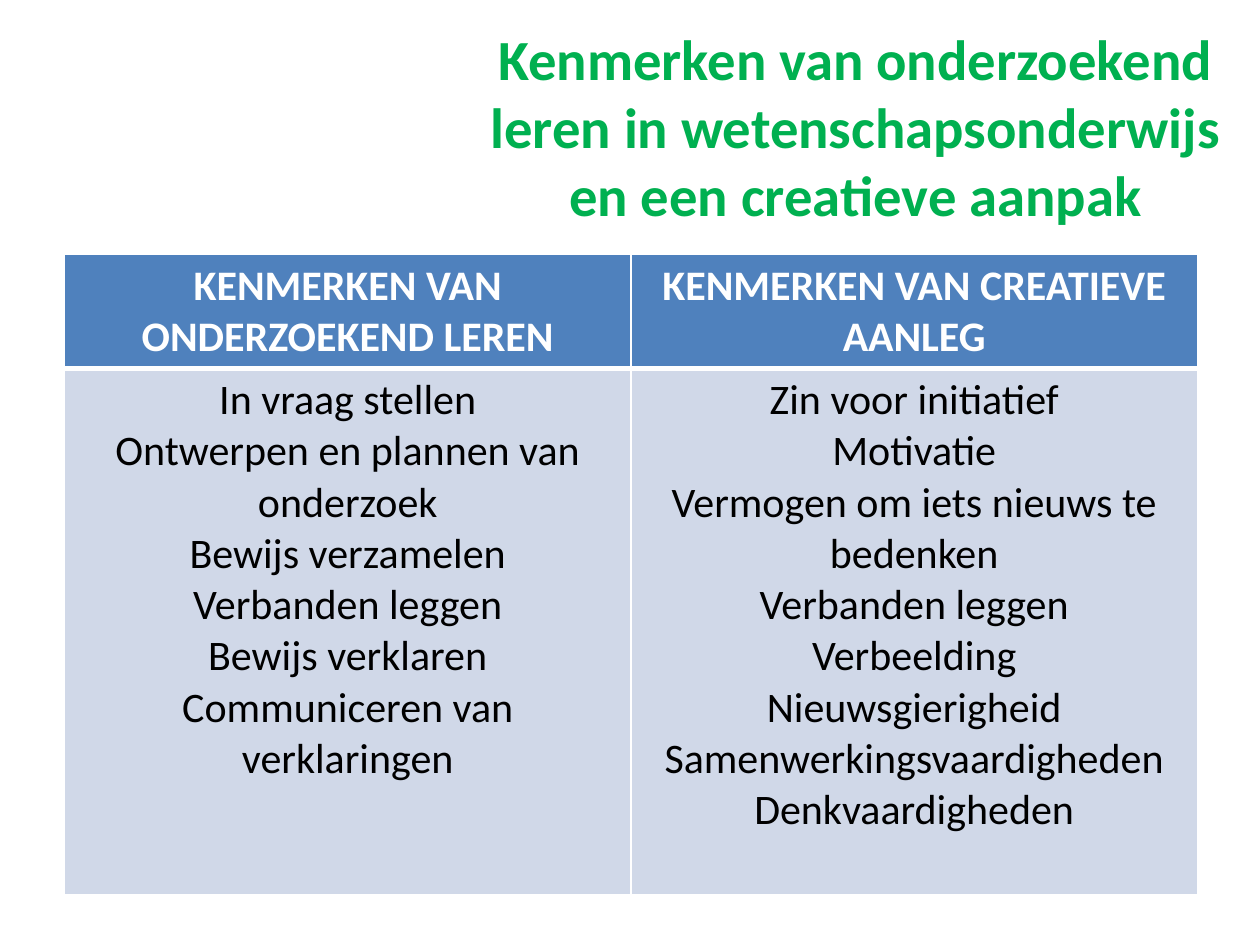
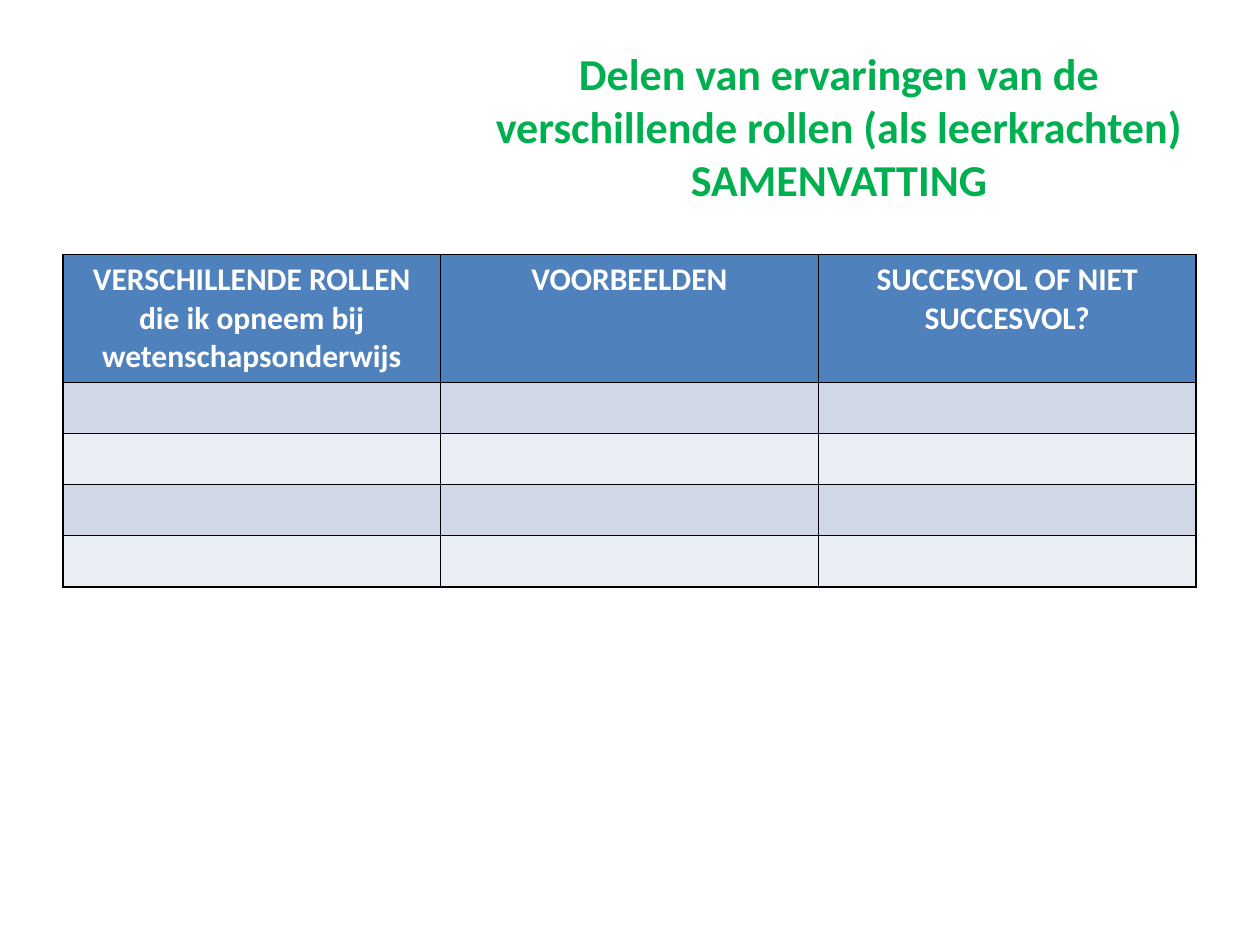
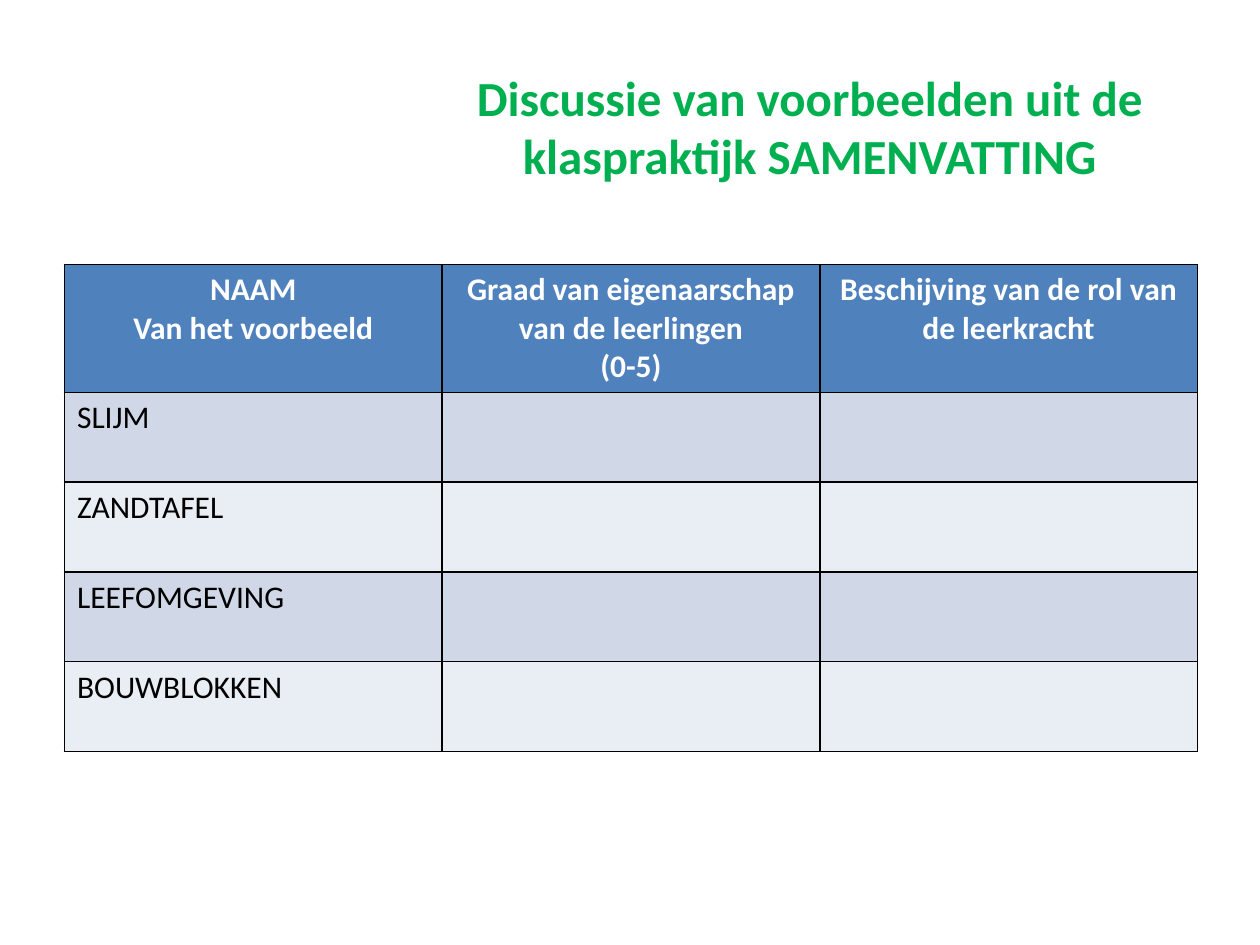
import pptx
import pptx.dml.color
import pptx.enum.text
import pptx.oxml
import pptx.oxml.ns
import pptx.util

Cm = pptx.util.Cm
FONT = "Calibri"
HUES = {
    "title": "00B050",
    "head": "4F81BD",
    "odd": "D0D8E8",
    "even": "E9EDF4",
    "white": "FFFFFF",
    "black": "000000",
}
TOP = 0.76
TALL = 3.56
WIDE = 22.84
ALIGN = pptx.enum.text.PP_ALIGN


def get_hue(name):
    return pptx.dml.color.RGBColor.from_string(HUES[name])


def fill_text(frame, text, size, hue, bold, align):
    frame.text = text
    for para in frame.paragraphs:
        para.alignment = align
        para.font.size = pptx.util.Pt(size)
        for run in para.runs:
            run.font.name = FONT
            run.font.size = pptx.util.Pt(size)
            run.font.bold = bold
            run.font.color.rgb = get_hue(hue)


def add_title(slide, box, text, size):
    frame = slide.shapes.add_textbox(*map(Cm, box)).text_frame
    frame.word_wrap = True
    frame.vertical_anchor = pptx.enum.text.MSO_ANCHOR.MIDDLE
    fill_text(frame, text, size, "title", True, ALIGN.CENTER)


def add_edge(cell, side, hue, width):
    space = pptx.oxml.ns.nsdecls("a")
    line = pptx.oxml.parse_xml(
        f'<a:ln{side} {space} w="{pptx.util.Pt(width)}"><a:solidFill>'
        f'<a:srgbClr val="{HUES[hue]}"/></a:solidFill></a:ln{side}>'
    )
    cell._tc.get_or_add_tcPr().append(line)


def add_grid(slide, box, rows, highs, size, edge, rule, align):
    left, top, wide = box
    count = len(rows[0])
    shape = slide.shapes.add_table(
        len(rows), count, Cm(left), Cm(top), Cm(wide), Cm(sum(highs))
    )
    table = shape.table
    table.horz_banding = False
    for col in table.columns:
        col.width = Cm(wide / count)
    for i, texts in enumerate(rows):
        table.rows[i].height = Cm(highs[i])
        head = i == 0
        fill = "head" if head else "odd" if i % 2 else "even"
        for j, text in enumerate(texts):
            cell = table.cell(i, j)
            for side in "LRTB":
                split = (i, side) in ((0, "B"), (1, "T"))
                add_edge(cell, side, edge, rule if split else 1)
            cell.fill.solid()
            cell.fill.fore_color.rgb = get_hue(fill)
            fill_text(
                cell.text_frame, text, size,
                "white" if head else "black", head,
                ALIGN.CENTER if head else align,
            )


def add_traits(slide):
    add_title(
        slide, (9.09, TOP, 16.31, TALL),
        "Kenmerken van onderzoekend leren in wetenschapsonderwijs "
        "en een creatieve aanpak", 32.4,
    )
    learn = [
        "In vraag stellen",
        "Ontwerpen en plannen van onderzoek",
        "Bewijs verzamelen",
        "Verbanden leggen",
        "Bewijs verklaren",
        "Communiceren van verklaringen",
    ]
    create = [
        "Zin voor initiatief",
        "Motivatie",
        "Vermogen om iets nieuws te bedenken",
        "Verbanden leggen",
        "Verbeelding",
        "Nieuwsgierigheid",
        "Samenwerkingsvaardigheden",
        "Denkvaardigheden",
    ]
    rows = [
        ["KENMERKEN VAN ONDERZOEKEND LEREN",
         "KENMERKEN VAN CREATIEVE AANLEG"],
        ["\n".join(learn), "\n".join(create)],
    ]
    add_grid(slide, (1.3, 5.13, WIDE), rows, [2.3, 10.6], 24,
             "white", 3, ALIGN.CENTER)


def add_form(slide, title, size, left, start, heads, names, high):
    add_title(slide, (left, TOP, 24.13 - left, TALL), title, size)
    rows = [heads] + [[name, "", ""] for name in names]
    add_grid(slide, (*start, WIDE), rows, [2.58] + [high] * len(names), 18,
             "black", 1, ALIGN.LEFT)


def main():
    deck = pptx.Presentation()
    deck.slide_width = Cm(25.4)
    deck.slide_height = Cm(19.05)
    blank = deck.slide_layouts[6]
    add_traits(deck.slides.add_slide(blank))
    add_form(
        deck.slides.add_slide(blank),
        "Delen van ervaringen van de verschillende rollen "
        "(als leerkrachten) SAMENVATTING",
        25.2, 9.7, (1.27, 5.13),
        ["VERSCHILLENDE ROLLEN\ndie ik opneem bij wetenschapsonderwijs",
         "VOORBEELDEN", "SUCCESVOL OF NIET SUCCESVOL?"],
        [""] * 4, 1.03,
    )
    add_form(
        deck.slides.add_slide(blank),
        "Discussie van voorbeelden uit de klaspraktijk SAMENVATTING",
        28, 8.51, (1.3, 5.33),
        ["NAAM\nVan het voorbeeld",
         "Graad van eigenaarschap van de leerlingen\n(0-5)",
         "Beschijving van de rol van de leerkracht"],
        ["SLIJM", "ZANDTAFEL", "LEEFOMGEVING", "BOUWBLOKKEN"], 1.81,
    )
    deck.save("out.pptx")


if __name__ == "__main__":
    main()
